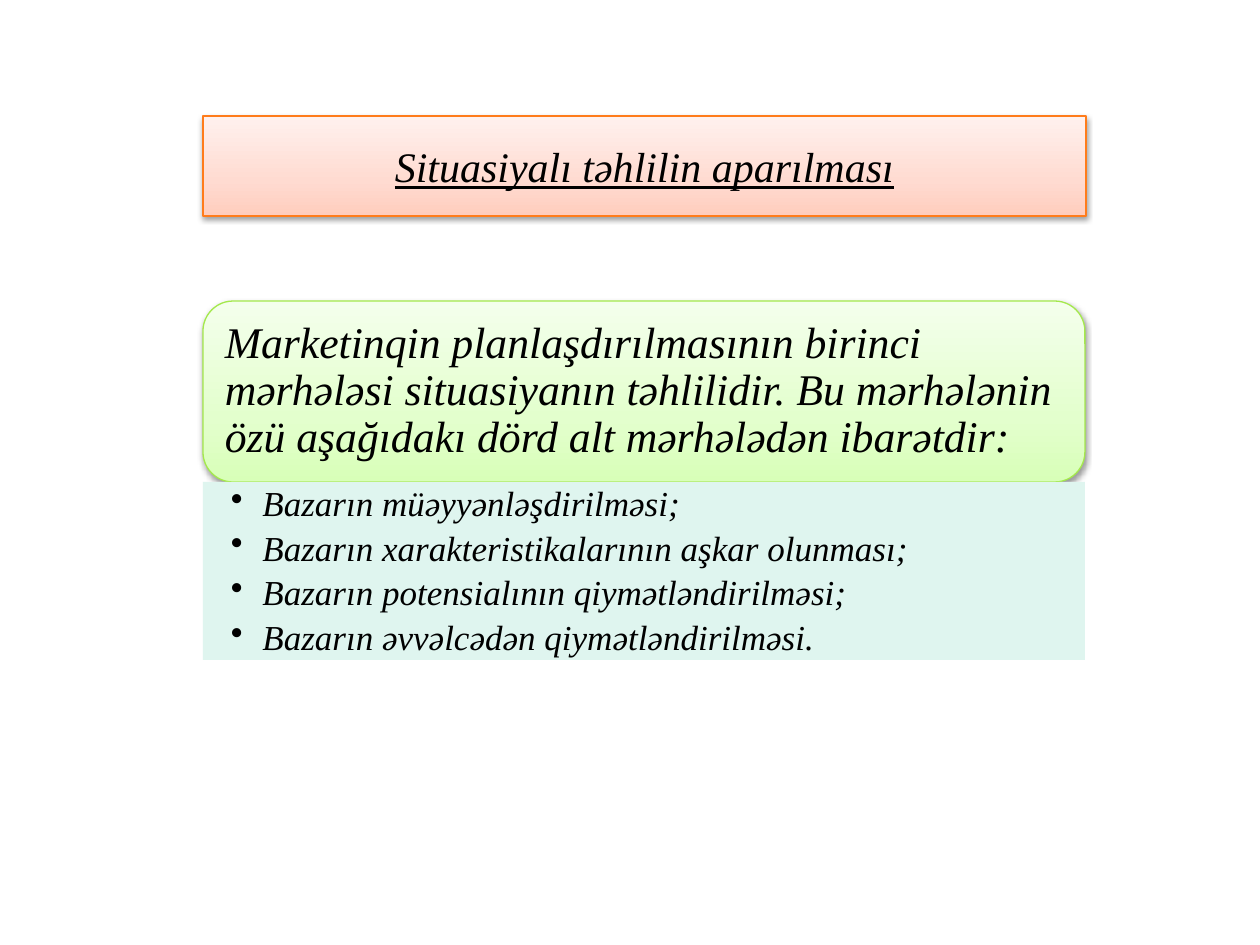
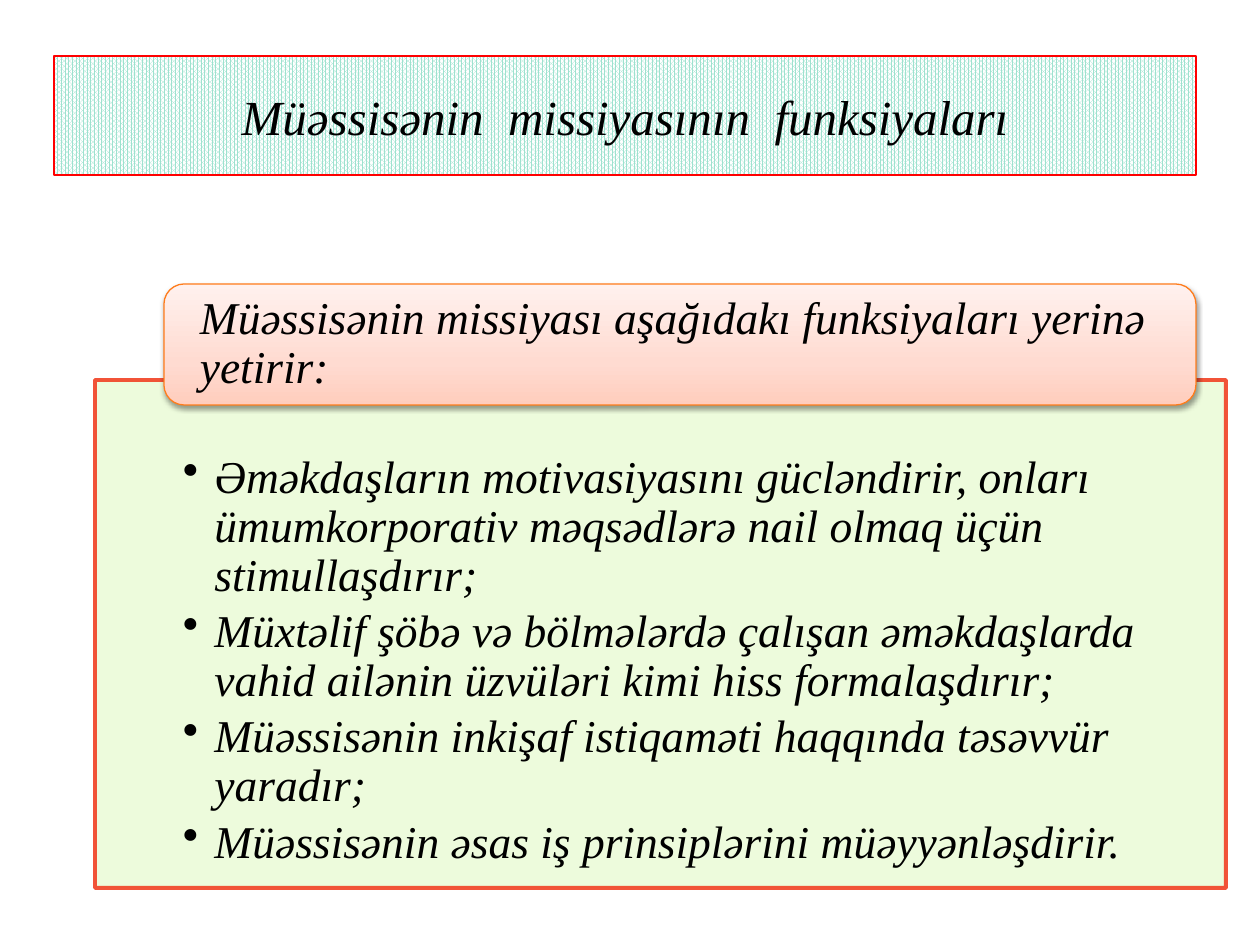
from lxml.etree import SubElement
from pptx import Presentation
from pptx.dml.color import RGBColor
from pptx.enum.dml import MSO_PATTERN
from pptx.enum.shapes import MSO_SHAPE as Shape
from pptx.enum.text import MSO_ANCHOR as Anchor, PP_ALIGN as Align
from pptx.oxml.ns import qn
from pptx.util import Pt

PX = 914400 / 126
FONT = "Times New Roman"
BLACK = RGBColor(0, 0, 0)
WHITE = RGBColor(255, 255, 255)
RED = RGBColor(255, 0, 0)
ORANGE = RGBColor(0xFF, 0x7C, 0x1B)
LIME = RGBColor(0xA4, 0xE9, 0x4C)
VERMILION = RGBColor(0xF1, 0x41, 0x24)
MINT = RGBColor(0x9E, 0xE2, 0xCF)
PALE_MINT = RGBColor(0xDF, 0xF5, 0xEF)
PALE_LIME = RGBColor(0xED, 0xFB, 0xDC)
PEACH_FADE = [(0, RGBColor(0xFF, 0xCD, 0xBD)), (35, RGBColor(0xFF, 0xDB, 0xD1)),
              (100, RGBColor(0xFF, 0xF1, 0xEE))]
LIME_FADE = [(0, RGBColor(0xD8, 0xFF, 0xB8)), (35, RGBColor(0xE3, 0xFF, 0xCD)),
             (100, RGBColor(0xF4, 0xFF, 0xEC))]

TITLE = dict(align=Align.CENTER, insets=(13, 6, 13, 6))
HEADING = dict(kind=Shape.ROUNDED_RECTANGLE, spacing=0.9)
LIST = dict(anchor=Anchor.TOP, spacing=0.9, after=4, bullets=True)

SLIDES = [
    [
        dict(TITLE, box=(203, 116, 883, 100), size=24, underline=True,
             fade=PEACH_FADE, line=ORANGE,
             text=["Situasiyalı təhlilin aparılması"]),
        dict(HEADING, box=(203, 301, 882, 181), size=25, insets=(13, 13, 13, 13),
             fade=LIME_FADE, line=LIME,
             text=["Marketinqin planlaşdırılmasının birinci mərhələsi situasiyanın "
                   "təhlilidir. Bu mərhələnin özü aşağıdakı dörd alt mərhələdən "
                   "ibarətdir:"]),
        dict(LIST, box=(203, 482, 882, 178), size=20, insets=(28, 4, 24, 4),
             fill=PALE_MINT,
             text=["Bazarın müəyyənləşdirilməsi;",
                   "Bazarın xarakteristikalarının aşkar olunması;",
                   "Bazarın potensialının qiymətləndirilməsi;",
                   "Bazarın əvvəlcədən qiymətləndirilməsi."]),
    ],
    [
        dict(TITLE, box=(54, 56, 1142, 119), size=28, word_gap=7,
             pattern=(MINT, WHITE), line=RED, weight=1,
             text=["Müəssisənin missiyasının funksiyaları"]),
        dict(LIST, box=(95, 380, 1131, 508), size=26, insets=(88, 74, 88, 25),
             fill=PALE_LIME, line=VERMILION, weight=2.25, line_opacity=90,
             text=["Əməkdaşların motivasiyasını gücləndirir, onları ümumkorporativ "
                   "məqsədlərə nail olmaq üçün stimullaşdırır;",
                   "Müxtəlif şöbə və bölmələrdə çalışan əməkdaşlarda vahid ailənin "
                   "üzvüləri kimi hiss formalaşdırır;",
                   "Müəssisənin inkişaf istiqaməti haqqında təsəvvür yaradır;",
                   "Müəssisənin əsas iş prinsiplərini müəyyənləşdirir."]),
        dict(HEADING, box=(164, 284, 1032, 121), size=26, insets=(30, 0, 30, 0),
             fade=PEACH_FADE, line=ORANGE,
             text=["Müəssisənin missiyası aşağıdakı funksiyaları yerinə yetirir:"]),
    ],
]


def px(length):
    return round(length * PX)


def add_xml(parent, tag, **attributes):
    return SubElement(parent, qn(tag), {k: str(v) for k, v in attributes.items()})


def add_color(parent, color, opacity=100):
    node = add_xml(parent, "a:srgbClr", val=color)
    if opacity < 100:
        add_xml(node, "a:alpha", val=opacity * 1000)


def fade_and_shadow(panel, stops):
    properties = panel.element.spPr
    gradient = add_xml(properties, "a:gradFill", rotWithShape=1)
    properties.find(qn("a:prstGeom")).addnext(gradient)
    stop_list = add_xml(gradient, "a:gsLst")
    for position, color in stops:
        add_color(add_xml(stop_list, "a:gs", pos=position * 1000), color)
    add_xml(gradient, "a:lin", ang=270 * 60000, scaled=0)
    shadow = add_xml(properties.find(qn("a:effectLst")), "a:outerShdw", blurRad=40000,
                     dist=20000, dir=90 * 60000, rotWithShape=0)
    add_color(shadow, BLACK, 38)


def paint(panel, part):
    panel.shadow.inherit = False
    if "fade" in part:
        fade_and_shadow(panel, part["fade"])
    elif "pattern" in part:
        panel.fill.patterned()
        panel.fill.pattern = MSO_PATTERN.PERCENT_80
        panel.fill.fore_color.rgb, panel.fill.back_color.rgb = part["pattern"]
    else:
        panel.fill.solid()
        panel.fill.fore_color.rgb = part["fill"]
    if "line" not in part:
        panel.line.fill.background()
        return
    panel.line.color.rgb = part["line"]
    panel.line.width = Pt(part.get("weight", 0.75))
    if "line_opacity" in part:
        color = panel.element.spPr.find(qn("a:ln")).find(".//" + qn("a:srgbClr"))
        add_xml(color, "a:alpha", val=part["line_opacity"] * 1000)


def add_run(paragraph, words, part):
    run = paragraph.add_run()
    run.text = words
    font = run.font
    font.name, font.size, font.italic = FONT, Pt(part["size"]), True
    font.underline = part.get("underline")
    font.color.rgb = BLACK
    return run


def write(panel, part):
    frame = panel.text_frame
    frame.word_wrap = True
    frame.vertical_anchor = part.get("anchor", Anchor.MIDDLE)
    (frame.margin_left, frame.margin_top,
     frame.margin_right, frame.margin_bottom) = map(px, part["insets"])
    for index, text in enumerate(part["text"]):
        paragraph = frame.add_paragraph() if index else frame.paragraphs[0]
        paragraph.alignment = part.get("align", Align.LEFT)
        paragraph.line_spacing = part.get("spacing", 1.0)
        paragraph.space_after = Pt(part.get("after", 0))
        if part.get("bullets"):
            paragraph.level = 1
            properties = paragraph._p.get_or_add_pPr()
            properties.set("marL", "228600")
            properties.set("indent", "-228600")
            add_xml(properties, "a:buChar", char="•")
        if "word_gap" not in part:
            add_run(paragraph, text, part)
            continue
        for position, word in enumerate(text.split()):
            if position:
                gap = add_run(paragraph, " ", part)
                gap.font._element.set("spc", str(part["word_gap"] * 100))
            add_run(paragraph, word, part)


def main():
    deck = Presentation()
    deck.slide_width, deck.slide_height = px(1260), px(945)
    for parts in SLIDES:
        slide = deck.slides.add_slide(deck.slide_layouts[6])
        for part in parts:
            panel = slide.shapes.add_shape(part.get("kind", Shape.RECTANGLE),
                                           *map(px, part["box"]))
            paint(panel, part)
            write(panel, part)
    deck.save("out.pptx")


if __name__ == "__main__":
    main()
